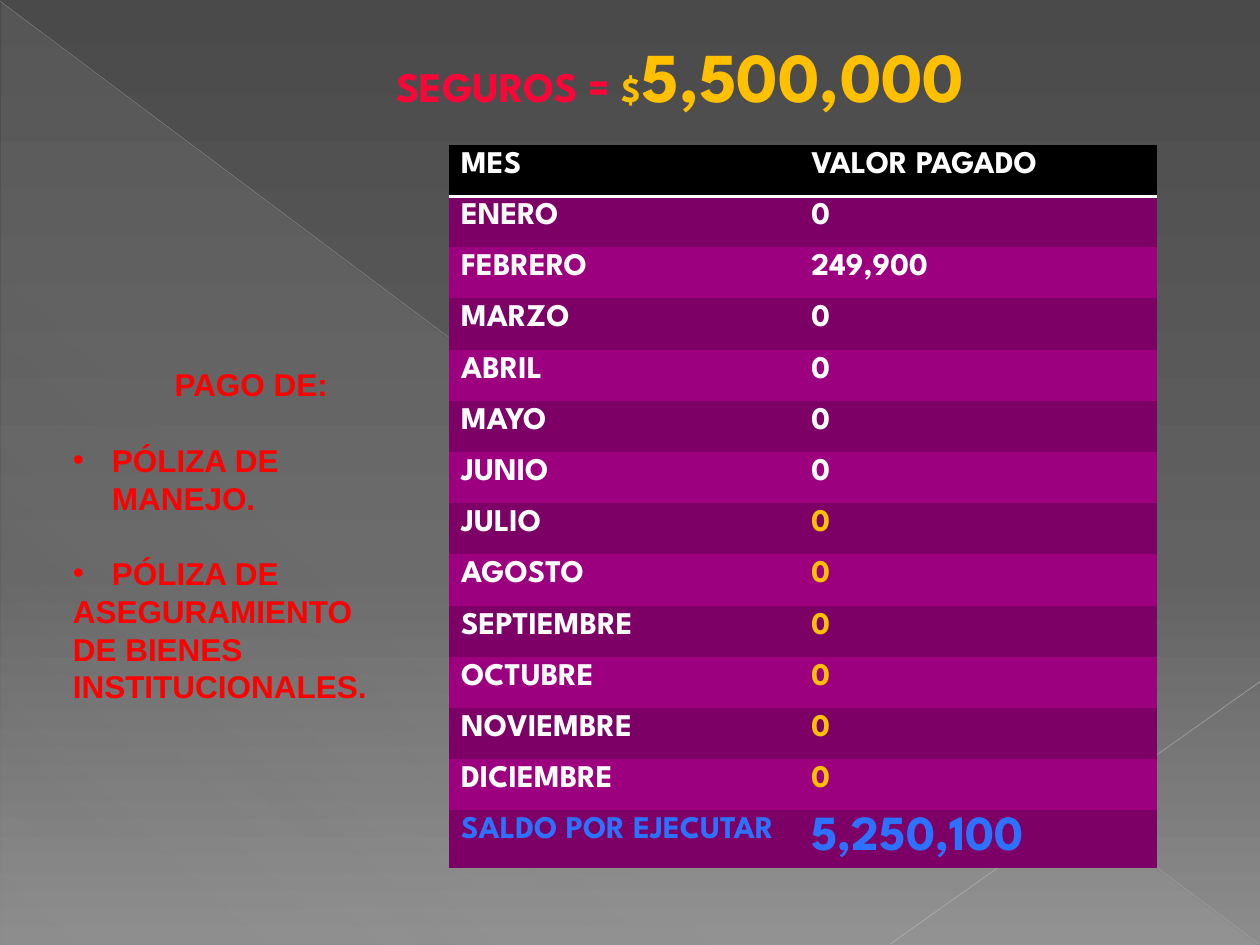
from lxml import etree
from pptx import Presentation
from pptx import util as u
from pptx.dml.color import RGBColor
from pptx.enum import shapes, text
from pptx.oxml import ns

BLACK = RGBColor(0x00, 0x00, 0x00)
WHITE = RGBColor(0xFF, 0xFF, 0xFF)
PLUM = RGBColor(0x7D, 0x00, 0x66)
MAGENTA = RGBColor(0x9C, 0x00, 0x7F)
GOLD = RGBColor(0xFF, 0xC0, 0x00)
BLUE = RGBColor(0x2C, 0x71, 0xFF)
CRIMSON = RGBColor(0xFF, 0x05, 0x37)
RED = RGBColor(0xFF, 0x00, 0x00)
SILVER = RGBColor(0xBF, 0xBF, 0xBF)
PALE = RGBColor(0xC6, 0xC6, 0xC6)
MIST = RGBColor(0xD2, 0xD2, 0xD2)
SHADES = [RGBColor(0x4A, 0x4A, 0x4A), RGBColor(0x62, 0x62, 0x62), RGBColor(0x8C, 0x8C, 0x8C)]

NO_GRID_STYLE = "{2D5ABB26-0587-4C30-8999-92F81FD0307C}"
DISPLAY, BODY = "League Spartan", "Arial"

PAID = {"FEBRERO": "249,900"}
EARLY_MONTHS = ["ENERO", "FEBRERO", "MARZO", "ABRIL", "MAYO", "JUNIO"]
LATE_MONTHS = ["JULIO", "AGOSTO", "SEPTIEMBRE", "OCTUBRE", "NOVIEMBRE", "DICIEMBRE"]


def add_node(parent, tag, **attributes):
    return etree.SubElement(parent, ns.qn(tag), {key: str(value) for key, value in attributes.items()})


def add_color(parent, color, opacity=100):
    node = add_node(parent, "a:srgbClr", val=color)
    if opacity < 100:
        add_node(node, "a:alpha", val=opacity * 1000)


def set_values(target, values):
    for name, value in values.items():
        setattr(target, name, value)


class SlideBuilder:
    def __init__(self, page):
        self.page = page
        self.font = {"name": DISPLAY, "bold": True}

    def gradient(self, fill, owner, stops, angle):
        fill.gradient()
        gradient = next(owner.iter(ns.qn("a:gradFill")))
        for child in list(gradient):
            gradient.remove(child)
        stop_list = add_node(gradient, "a:gsLst")
        for position, color, opacity in stops:
            add_color(add_node(stop_list, "a:gs", pos=position * 1000), color, opacity)
        add_node(gradient, "a:lin", ang=angle * 60000, scaled=0)

    def background(self, stops, angle):
        self.gradient(self.page.background.fill, self.page.element, stops, angle)

    def triangle(self, bounds, stops, angle):
        shape = self.page.shapes.add_shape(shapes.MSO_SHAPE.RIGHT_TRIANGLE, *map(u.Inches, bounds))
        shape.shadow.inherit = False
        shape.line.fill.background()
        self.gradient(shape.fill, shape.element, stops, angle)

    def line(self, ends, color, width, opacity):
        line = self.page.shapes.add_connector(shapes.MSO_CONNECTOR.STRAIGHT, *map(u.Inches, ends))
        line.line.color.rgb = color
        line.line.width = u.Pt(width)
        add_node(next(line.element.iter(ns.qn("a:srgbClr"))), "a:alpha", val=opacity * 1000)
        add_node(line.element.spPr, "a:effectLst")

    def span(self, para, words, size, color, **values):
        span = para.add_run()
        span.text = words
        set_values(span.font, {**self.font, "size": u.Pt(size), **values})
        span.font.color.rgb = color

    def text_box(self, bounds):
        box = self.page.shapes.add_textbox(*map(u.Inches, bounds))
        box.text_frame.word_wrap = True
        return box.text_frame

    def title(self, bounds, spans):
        para = self.text_box(bounds).paragraphs[0]
        para.alignment = text.PP_ALIGN.CENTER
        for words, size, color in spans:
            self.span(para, words, size, color)

    def notice(self, bounds, lines, size, color):
        frame = self.text_box(bounds)
        for index, (words, kind) in enumerate(lines):
            para = frame.paragraphs[0] if index == 0 else frame.add_paragraph()
            self.span(para, words, size, color, name=BODY)
            if kind == "heading":
                para.alignment = text.PP_ALIGN.CENTER
            if kind == "bullet":
                para.space_before = u.Pt(21.5)
                properties = para._p.get_or_add_pPr()
                indent = u.Inches(0.31)
                properties.set("marL", str(indent))
                properties.set("indent", str(-indent))
                add_node(properties, "a:buFont", typeface=BODY)
                add_node(properties, "a:buChar", char="•")

    def underline(self, cell, color, width):
        properties = cell._tc.get_or_add_tcPr()
        border = add_node(properties, "a:lnB", w=u.Pt(width))
        add_color(add_node(border, "a:solidFill"), color)
        properties.insert(0, border)

    def table(self, bounds, widths, rows):
        table = self.page.shapes.add_table(len(rows), len(widths), *map(u.Inches, bounds)).table
        set_values(table, {"first_row": False, "horz_banding": False})
        next(table._tbl.iter(ns.qn("a:tableStyleId"))).text = NO_GRID_STYLE
        for column, width in zip(table.columns, widths):
            column.width = u.Inches(width)
        for row_index, entries in enumerate(rows):
            for column_index, (words, size, color) in enumerate(entries):
                cell = table.cell(row_index, column_index)
                cell.fill.solid()
                cell.fill.fore_color.rgb = (MAGENTA, PLUM)[row_index % 2] if row_index else BLACK
                self.span(cell.text_frame.paragraphs[0], words, size, color)
                if row_index == 0:
                    self.underline(cell, WHITE, 2)


def table_rows():
    rows = [[("MES", 18, WHITE), ("VALOR PAGADO", 18, WHITE)]]
    for months, color in ((EARLY_MONTHS, WHITE), (LATE_MONTHS, GOLD)):
        rows += [[(month, 18, WHITE), (PAID.get(month, "0"), 18, color)] for month in months]
    return rows + [[("SALDO POR EJECUTAR", 18, BLUE), ("5,250,100", 28, BLUE)]]


def main():
    deck = Presentation()
    set_values(deck, {"slide_width": u.Inches(10), "slide_height": u.Inches(7.5)})
    builder = SlideBuilder(deck.slides.add_slide(deck.slide_layouts[6]))
    builder.background(list(zip((0, 60, 100), SHADES, (100, 100, 100))), 90)
    builder.triangle((0.01, 0.02, 9.98, 7.48), [(0, MIST, 10), (70, MIST, 8), (100, MIST, 1)], 133)
    builder.line((0, 0.01, 9.99, 7.49), SILVER, 0.39, 35)
    builder.line((10, 5.41, 7.07, 7.49), PALE, 0.47, 45)
    builder.table((3.56, 1.15, 5.62, 5.69), (2.78, 2.84), table_rows())
    builder.title((1.69, 0.21, 7.42, 0.77), [
        ("SEGUROS = ", 24, CRIMSON), ("$", 20, GOLD), ("5,500,000", 40, GOLD)])
    builder.notice((0.48, 2.85, 3.03, 2.52), [
        ("PAGO DE:", "heading"),
        ("PÓLIZA DE MANEJO.", "bullet"),
        ("PÓLIZA DE", "bullet"),
        ("ASEGURAMIENTO", "plain"),
        ("DE BIENES", "plain"),
        ("INSTITUCIONALES.", "plain")], 18, RED)
    deck.save("out.pptx")


if __name__ == "__main__":
    main()
